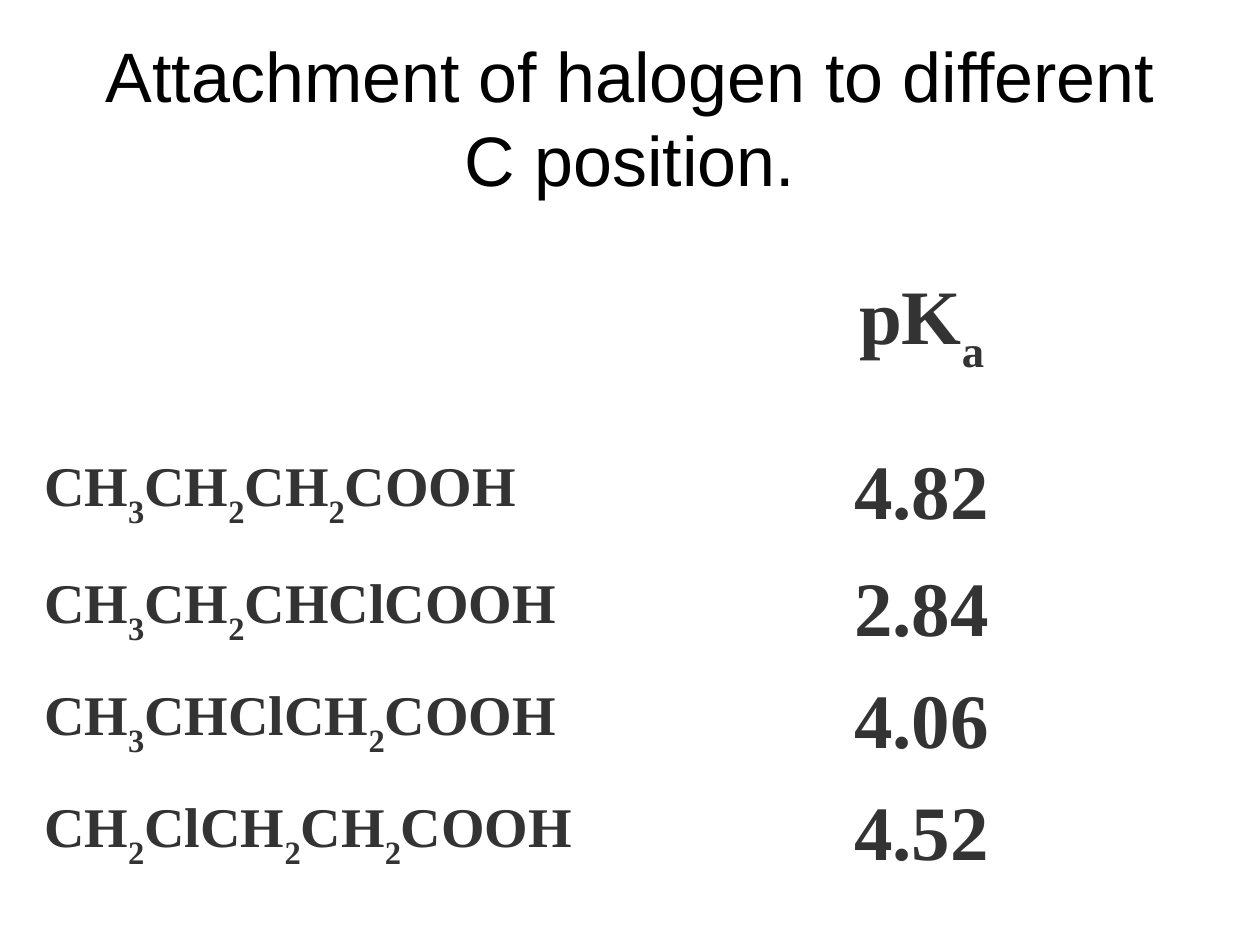
import pptx
import pptx.dml.color
import pptx.enum.text
import pptx.util

Inches = pptx.util.Inches
ALIGN = pptx.enum.text.PP_ALIGN
MIDDLE = pptx.enum.text.MSO_ANCHOR.MIDDLE

HEAD = "pK_a"
# Underscores enclose subscripts.
ACIDS = [
    ("CH_3_CH_2_CH_2_COOH", "4.82"),
    ("CH_3_CH_2_CHClCOOH", "2.84"),
    ("CH_3_CHClCH_2_COOH", "4.06"),
    ("CH_2_ClCH_2_CH_2_COOH", "4.52"),
]


def color(code):
    return pptx.dml.color.RGBColor.from_string(code)


def style(run, face, size, code, bold=False):
    run.font.name = face
    run.font.size = pptx.util.Pt(size)
    run.font.color.rgb = color(code)
    run.font.bold = bold


def add_title(slide, left, top, width, height):
    frame = slide.shapes.add_textbox(left, top, width, height).text_frame
    frame.word_wrap = True
    frame.vertical_anchor = MIDDLE
    frame.text = "Attachment of halogen to different C position."
    para = frame.paragraphs[0]
    para.alignment = ALIGN.CENTER
    style(para.runs[0], "Arial", 40, "000000")


def fill_cell(cell, text, size, align):
    """Write text whose every second part, split at underscores, is a subscript."""
    cell.fill.background()
    cell.vertical_anchor = MIDDLE
    para = cell.text_frame.paragraphs[0]
    para.alignment = align
    props = para._p.get_or_add_pPr()
    props.set("marL", str(Inches(0.38)))
    props.set("indent", str(Inches(-0.38)))
    for place, part in enumerate(text.split("_")):
        run = para.add_run()
        run.text = part
        style(run, "Times New Roman", size, "333333", True)
        if place % 2:
            run.font._element.set("baseline", "-30000")


def add_acids(slide, left, top, width, height):
    rows = [("", HEAD)] + ACIDS
    table = slide.shapes.add_table(len(rows), 2, left, top, width, height).table
    table.first_row = table.horz_banding = False
    for row, tall in zip(table.rows, (1.68, 0.97, 0.89, 0.89, 0.89)):
        row.height = Inches(tall)
    for row, (acid, value) in zip(table.rows, rows):
        fill_cell(row.cells[0], acid, 32, ALIGN.LEFT)
        fill_cell(row.cells[1], value, 44, ALIGN.CENTER)


def main():
    deck = pptx.Presentation()
    deck.slide_width = Inches(10)
    deck.slide_height = Inches(7.5)
    slide = deck.slides.add_slide(deck.slide_layouts[6])
    add_title(slide, Inches(0.5), Inches(0.3), Inches(9), Inches(1.25))
    add_acids(slide, Inches(0.25), Inches(1.75), Inches(9.42), Inches(5.33))
    deck.save("out.pptx")


if __name__ == "__main__":
    main()
